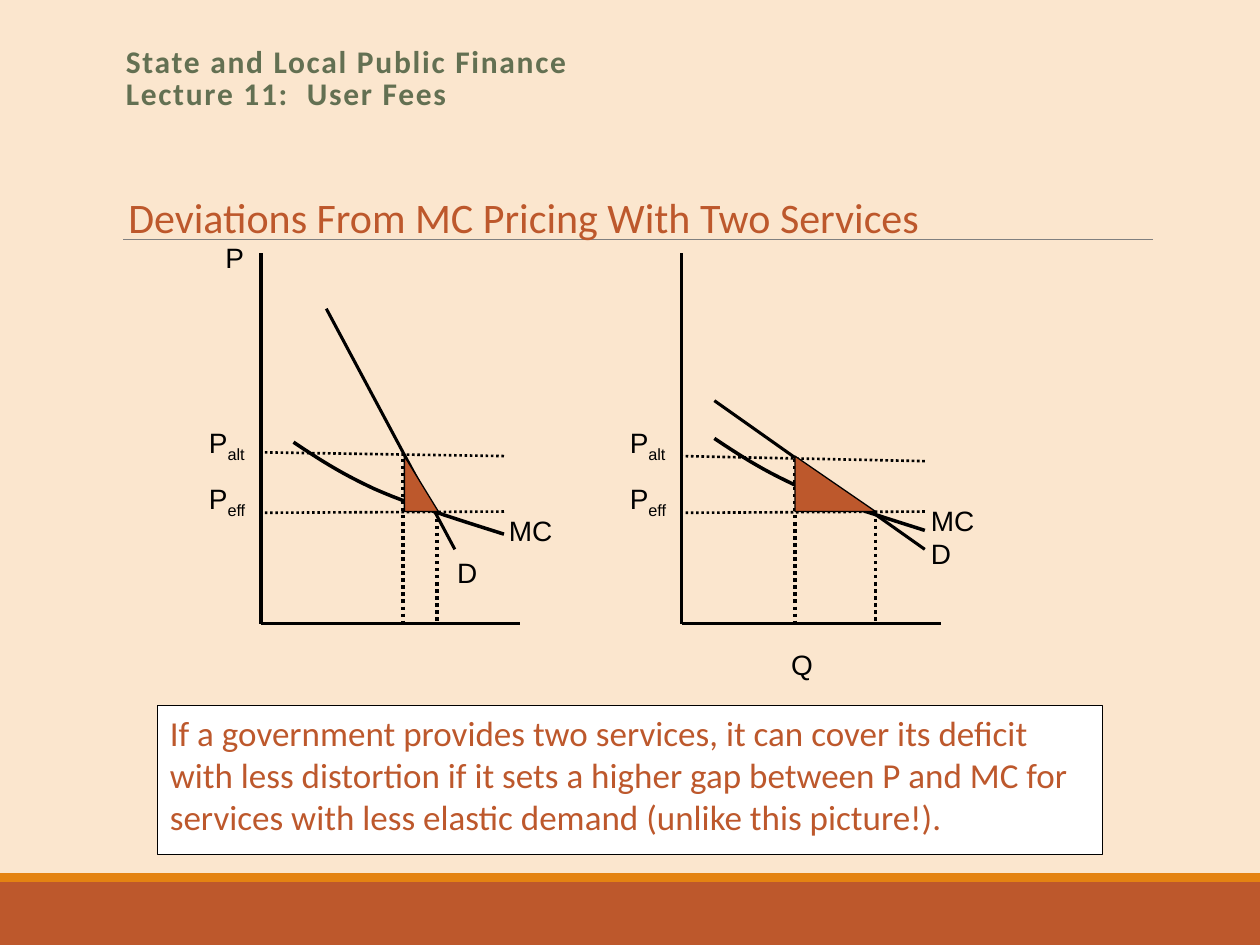
import pptx
import pptx.util
import pptx.dml.color
import pptx.enum.dml
import pptx.enum.shapes
import pptx.enum.text
import lxml.etree

RGB = pptx.dml.color.RGBColor
CREAM = RGB(0xFB, 0xE6, 0xCE)
RUST = RGB(0xBD, 0x58, 0x2C)
ORANGE = RGB(0xE4, 0x83, 0x12)
GREEN = RGB(0x63, 0x70, 0x52)
GRAY = RGB(0x80, 0x80, 0x80)
BLACK = RGB(0, 0, 0)
WHITE = RGB(0xFF, 0xFF, 0xFF)
RECTANGLE = pptx.enum.shapes.MSO_SHAPE.RECTANGLE
TRIANGLE = pptx.enum.shapes.MSO_SHAPE.RIGHT_TRIANGLE

deck = pptx.Presentation()
deck.slide_width = pptx.util.Inches(10)
deck.slide_height = pptx.util.Inches(7.5)
COL = deck.slide_width / 100
ROW = deck.slide_height / 75
slide = deck.slides.add_slide(deck.slide_layouts[6])
slide.background.fill.solid()
slide.background.fill.fore_color.rgb = CREAM
shapes = slide.shapes


def rule(x1, y1, x2, y2, weight=2, dotted=False, color=BLACK):
    line = shapes.add_connector(
        pptx.enum.shapes.MSO_CONNECTOR.STRAIGHT,
        int(x1 * COL), int(y1 * ROW), int(x2 * COL), int(y2 * ROW))
    line.line.color.rgb = color
    line.line.width = pptx.util.Pt(weight)
    if dotted:
        line.line.dash_style = pptx.enum.dml.MSO_LINE.ROUND_DOT
    lxml.etree.SubElement(line._element.spPr, pptx.oxml.ns.qn("a:effectLst"))


def write(frame, runs, size=16, font="Arial", color=BLACK):
    frame.word_wrap = True
    frame.vertical_anchor = pptx.enum.text.MSO_ANCHOR.TOP
    paragraph = frame.paragraphs[0]
    paragraph.alignment = pptx.enum.text.PP_ALIGN.LEFT
    for position, words in enumerate(runs):
        if words == "\n":
            paragraph.add_line_break()
            continue
        run = paragraph.add_run()
        run.text = words
        run.font.size = pptx.util.Pt(size)
        run.font.name = font
        run.font.color.rgb = color
        if position and words in ("eff", "alt"):
            run._r.get_or_add_rPr().set("baseline", "-25000")
    return paragraph


for top, height, color in [(70, 5, RUST), (69.3, 0.7, ORANGE)]:
    band = shapes.add_shape(RECTANGLE, 0, int(top * ROW), deck.slide_width, int(height * ROW))
    band.shadow.inherit = False
    band.fill.solid()
    band.fill.fore_color.rgb = color
    band.line.fill.background()
rule(9.8, 19, 91.5, 19, 0.5, color=GRAY)

markets = [
    dict(origin=20.7, demand=(25.9, 24.5, 36.1, 43.6), alt=(35.9, 36.2),
         cost_top=35.1, quantities=(32, 34.7), loss=(32.1, 2.7)),
    dict(origin=54.1, demand=(56.7, 31.8, 73.4, 43.6), alt=(36.2, 36.6),
         cost_top=34.8, quantities=(63.1, 69.5), loss=(63.1, 6.4)),
]
cost_curve = [
    ((0, 0), (1.8, 1.2), (3.6, 2.4), (6.4, 3.7)),
    ((6.4, 3.7), (9.1, 4.9), (12.9, 6.1), (16.7, 7.3)),
]
STEPS = 12
for market in markets:
    origin = market["origin"]
    rule(origin, 20.1, origin, 49.5)
    rule(origin, 49.5, origin + 20.6, 49.5)
    rule(*market["demand"], weight=1.75)

    points = [(0, 0)]
    for bend in cost_curve:
        for step in range(1, STEPS + 1):
            t = step / STEPS
            weights = ((1 - t) ** 3, 3 * t * (1 - t) ** 2, 3 * t * t * (1 - t), t ** 3)
            points.append(tuple(sum(w * p[axis] for w, p in zip(weights, bend)) for axis in (0, 1)))
    points = [((origin + 2.6 + x) * COL, (market["cost_top"] + y) * ROW) for x, y in points]
    outline = shapes.build_freeform(*points[0])
    outline.add_line_segments(points[1:], close=False)
    marginal_cost = outline.convert_to_shape()
    marginal_cost.shadow.inherit = False
    marginal_cost.fill.background()
    marginal_cost.line.color.rgb = BLACK
    marginal_cost.line.width = pptx.util.Pt(2)

    alt_left, alt_right = market["alt"]
    rule(origin + 19.3, 40.6, origin, 40.7, 1.5, True)
    rule(origin + 19.3, alt_right, origin, alt_left, 1.5, True)
    alt_quantity, eff_quantity = market["quantities"]
    rule(eff_quantity, 40.6, eff_quantity, 49.5, dotted=True)
    rule(alt_quantity, 36.4, alt_quantity, 49.6, dotted=True)

    left, width = market["loss"]
    loss = shapes.add_shape(TRIANGLE, int(left * COL), int(36.2 * ROW), int(width * COL), int(4.4 * ROW))
    loss.shadow.inherit = False
    loss.fill.solid()
    loss.fill.fore_color.rgb = RUST
    loss.line.color.rgb = BLACK
    loss.line.width = pptx.util.Pt(0.75)

labels = [
    (16.9, 18.6, 3.9, 5.9, ["P"]),
    (61.8, 50.9, 3.9, 5.9, ["Q"]),
    (35.3, 43.6, 12.8, 4.4, ["D"]),
    (72.9, 42.1, 12.8, 4.4, ["D"]),
    (39.4, 40.3, 6.4, 4.4, ["MC"]),
    (72.9, 39.5, 6.4, 4.4, ["MC"]),
]
for market in markets:
    for top, price in [(37.7, "eff"), (33.3, "alt")]:
        labels.append((market["origin"] - 5.1, top, 10.3, 4.4, ["P", price]))
for left, top, width, height, runs in labels:
    label = shapes.add_textbox(int(left * COL), int(top * ROW), int(width * COL), int(height * ROW))
    write(label.text_frame, runs)

conclusion = shapes.add_shape(RECTANGLE, int(12.5 * COL), int(56 * ROW), int(75 * COL), int(11.8 * ROW))
conclusion.shadow.inherit = False
conclusion.fill.solid()
conclusion.fill.fore_color.rgb = WHITE
conclusion.line.color.rgb = BLACK
conclusion.line.width = pptx.util.Pt(0.75)
write(conclusion.text_frame, [
    "If a government provides two services, it can cover its deficit with less distortion "
    "if it sets a higher gap between P and MC for services with less elastic demand "
    "(unlike this picture!)."], 20, "Calibri", RUST)

course = shapes.add_textbox(int(9 * COL), int(3.3 * ROW), int(82.5 * COL), int(6.5 * ROW))
course_lines = write(course.text_frame, [
    "State and Local Public Finance", "\n", "Lecture 11:  User Fees"], 18, "Calibri", GREEN)
course_lines.line_spacing = 0.85
for run in course_lines.runs:
    run.font.bold = True
    run._r.get_or_add_rPr().set("spc", "100")

heading = shapes.add_textbox(int(9.2 * COL), int(14.7 * ROW), int(75 * COL), int(5 * ROW))
write(heading.text_frame, ["Deviations From MC Pricing With Two Services"], 24, "Calibri", RUST)

deck.save("out.pptx")
